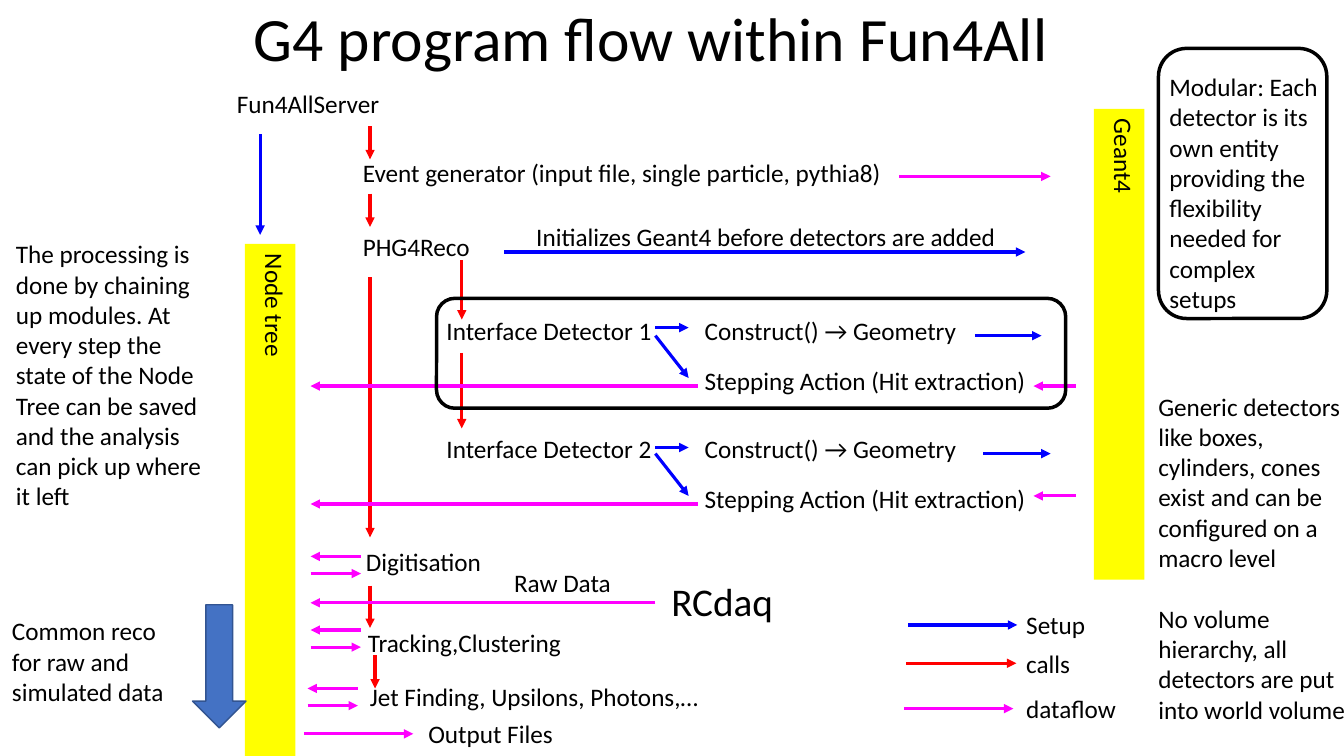
from dataclasses import dataclass

from lxml.etree import SubElement
from pptx import Presentation
from pptx.dml.color import RGBColor
from pptx.enum.shapes import MSO_CONNECTOR, MSO_SHAPE
from pptx.enum.text import MSO_ANCHOR, MSO_AUTO_SIZE, PP_ALIGN
from pptx.oxml.ns import qn
from pptx.slide import Slide
from pptx.text.text import TextFrame
from pptx.util import Inches, Pt

BLACK = RGBColor(0x00, 0x00, 0x00)
YELLOW = RGBColor(0xFF, 0xFF, 0x00)
SETUP = RGBColor(0x00, 0x00, 0xFF)
CALLS = RGBColor(0xFF, 0x00, 0x00)
DATAFLOW = RGBColor(0xFF, 0x00, 0xFF)
STEEL_BLUE = RGBColor(0x44, 0x72, 0xC4)
DARK_BLUE = RGBColor(0x32, 0x54, 0x91)


@dataclass(frozen=True)
class Label:
    text: str
    left: float
    top: float
    width: float
    height: float = 0.4
    size: int = 18
    wrap: bool = False
    anchor: MSO_ANCHOR = MSO_ANCHOR.TOP
    line_spacing: float = 1.0


@dataclass(frozen=True)
class Arrow:
    color: RGBColor
    start_x: float
    start_y: float
    end_x: float
    end_y: float


@dataclass(frozen=True)
class Block:
    preset: MSO_SHAPE
    left: float
    top: float
    width: float
    height: float
    fill: RGBColor | None = None
    line: RGBColor | None = None
    line_width: float = 2.5
    text: str = ""


DETECTOR_STEP = 1.17
INTERFACE_TOP = 3.08

LABELS = [
    Label("G4 program flow within Fun4All", 2.42, -0.21, 8.5, 1.25, 44, True,
          MSO_ANCHOR.MIDDLE, 0.9),
    Label("Fun4AllServer", 2.25, 0.83, 1.69),
    Label("Event generator (input file, single particle, pythia8)", 3.5, 1.51, 5.41),
    Label("PHG4Reco", 3.5, 2.25, 1.27),
    Label("Initializes Geant4 before detectors are added", 5.22, 2.15, 4.81),
    Label("Digitisation", 3.53, 5.37, 1.38),
    Label("Raw Data", 5, 5.58, 1.17),
    Label("RCdaq", 6.56, 5.68, 1.22, 0.47, 28),
    Label("Tracking,Clustering", 3.55, 6.17, 2.21),
    Label("Jet Finding, Upsilons, Photons,…", 3.57, 6.71, 3.58),
    Label("Output Files", 4.15, 7.08, 1.44),
    Label("Setup", 10.08, 6, 0.79),
    Label("calls", 10.08, 6.38, 0.66),
    Label("dataflow", 10.08, 6.83, 1.1),
    Label("Modular: Each detector is its own entity providing the flexibility "
          "needed for complex setups", 11.5, 0.66, 1.73, 2.52, wrap=True),
    Label("Generic detectors like boxes, cylinders, cones exist and can be "
          "configured on a macro level\nNo volume hierarchy, all detectors are "
          "put into world volume", 11.39, 3.83, 2.07, 3.43, wrap=True),
    Label("The processing is done by chaining up modules. At every step the state "
          "of the Node Tree can be saved and the analysis can pick up where it left",
          0.06, 2.32, 2.1, 2.83, wrap=True),
    Label("Common reco for raw and simulated data", 0.02, 6.06, 1.92, 1.01, wrap=True),
]

ARROWS = [
    Arrow(SETUP, 2.58, 1.33, 2.58, 2.33),
    Arrow(SETUP, 5, 2.5, 10.17, 2.5),
    Arrow(SETUP, 6.5, 3.25, 6.83, 3.25),
    Arrow(SETUP, 6.5, 4.44, 6.83, 4.44),
    Arrow(SETUP, 9.67, 3.33, 10.33, 3.33),
    Arrow(SETUP, 9.75, 4.5, 10.42, 4.5),
    Arrow(SETUP, 9.01, 6.2, 10.09, 6.2),
    Arrow(CALLS, 3.67, 1.25, 3.67, 1.58),
    Arrow(CALLS, 3.67, 1.92, 3.67, 2.25),
    Arrow(CALLS, 3.67, 2.75, 3.67, 5.33),
    Arrow(CALLS, 4.58, 2.58, 4.58, 3.17),
    Arrow(CALLS, 4.58, 3.5, 4.58, 4.25),
    Arrow(CALLS, 3.67, 5.81, 3.67, 6.23),
    Arrow(CALLS, 3.72, 6.5, 3.72, 6.83),
    Arrow(CALLS, 8.99, 6.58, 10.08, 6.58),
    Arrow(DATAFLOW, 8.92, 1.75, 10.42, 1.75),
    Arrow(DATAFLOW, 10.67, 3.83, 10.25, 3.83),
    Arrow(DATAFLOW, 10.67, 4.92, 10.25, 4.92),
    Arrow(DATAFLOW, 6.5, 5.98, 3.08, 5.98),
    Arrow(DATAFLOW, 3.02, 7.28, 4.1, 7.28),
    Arrow(DATAFLOW, 8.97, 7.03, 10.05, 7.03),
]

for detector in range(2):
    shift = detector * DETECTOR_STEP
    LABELS += [
        Label(f"Interface Detector {detector + 1}", 4.33, INTERFACE_TOP + shift, 2.26),
        Label("Construct() → Geometry", 6.89, INTERFACE_TOP + shift, 2.74),
        Label("Stepping Action (Hit extraction)", 6.89, INTERFACE_TOP + 0.5 + shift, 3.44),
    ]
    ARROWS += [
        Arrow(SETUP, 6.5, 3.33 + shift, 6.83, 3.75 + shift),
        Arrow(DATAFLOW, 6.92, 3.83 + shift, 3.08, 3.83 + shift),
    ]

for exchange_left, exchange_top in ((3.08, 5.52), (3.08, 6.25), (3.05, 6.83)):
    exchange_right = exchange_left + 0.5
    return_y = exchange_top + 0.17
    ARROWS += [
        Arrow(DATAFLOW, exchange_right, exchange_top, exchange_left, exchange_top),
        Arrow(DATAFLOW, exchange_left, return_y, exchange_right, return_y),
    ]

BARS = [
    Block(MSO_SHAPE.RECTANGLE, 2.43, 2.42, 0.5, 5.08, YELLOW, text="Node tree"),
    Block(MSO_SHAPE.RECTANGLE, 10.85, 1.08, 0.5, 4.67, YELLOW, text="Geant4"),
]
OUTLINES = [
    Block(MSO_SHAPE.ROUNDED_RECTANGLE, 4.33, 2.96, 6.24, 1.09, line=BLACK),
    Block(MSO_SHAPE.ROUNDED_RECTANGLE, 11.49, 0.48, 1.67, 2.68, line=BLACK),
    Block(MSO_SHAPE.DOWN_ARROW, 1.91, 6, 0.53, 1.22, STEEL_BLUE, DARK_BLUE, 1),
]


def write_text(frame: TextFrame, text: str, size: int, alignment: PP_ALIGN,
               line_spacing: float = 1.0) -> None:
    frame.text = text
    font_format = {"name": "Calibri", "size": Pt(size)}
    for index, paragraph in enumerate(frame.paragraphs):
        paragraph.alignment = alignment
        paragraph.line_spacing = line_spacing
        if index:
            paragraph.space_before = Pt(22)
        for run in paragraph.runs:
            for attribute, value in font_format.items():
                setattr(run.font, attribute, value)
            run.font.color.rgb = BLACK


def draw_label(slide: Slide, label: Label) -> None:
    box = slide.shapes.add_textbox(Inches(label.left), Inches(label.top),
                                   Inches(label.width), Inches(label.height))
    frame_format = {"word_wrap": label.wrap, "vertical_anchor": label.anchor,
                    "auto_size": MSO_AUTO_SIZE.NONE if label.size == 44
                    else MSO_AUTO_SIZE.SHAPE_TO_FIT_TEXT}
    for attribute, value in frame_format.items():
        setattr(box.text_frame, attribute, value)
    write_text(box.text_frame, label.text, label.size, PP_ALIGN.LEFT, label.line_spacing)


def draw_arrow(slide: Slide, arrow: Arrow) -> None:
    connector = slide.shapes.add_connector(
        MSO_CONNECTOR.STRAIGHT, Inches(arrow.start_x), Inches(arrow.start_y),
        Inches(arrow.end_x), Inches(arrow.end_y))
    connector.line.color.rgb = arrow.color
    connector.line.width = Pt(2.25)
    properties = connector._element.spPr
    SubElement(properties.find(qn("a:ln")), qn("a:tailEnd"), type="triangle")
    SubElement(properties, qn("a:effectLst"))


def draw_block(slide: Slide, block: Block) -> None:
    shape = slide.shapes.add_shape(block.preset, Inches(block.left), Inches(block.top),
                                   Inches(block.width), Inches(block.height))
    shape.shadow.inherit = False
    if block.fill is None:
        shape.fill.background()
    else:
        shape.fill.solid()
        shape.fill.fore_color.rgb = block.fill
    if block.line is None:
        shape.line.fill.background()
    else:
        shape.line.color.rgb = block.line
        shape.line.width = Pt(block.line_width)
    if block.text:
        frame = shape.text_frame
        frame.vertical_anchor = MSO_ANCHOR.TOP
        frame.auto_size = MSO_AUTO_SIZE.SHAPE_TO_FIT_TEXT
        frame._txBody.bodyPr.set("vert", "eaVert")
        write_text(frame, block.text, 18, PP_ALIGN.CENTER)


def main() -> None:
    presentation = Presentation()
    presentation.slide_width = Inches(13.33)
    presentation.slide_height = Inches(7.5)
    slide = presentation.slides.add_slide(presentation.slide_layouts[6])
    for draw, elements in ((draw_block, BARS), (draw_label, LABELS),
                           (draw_arrow, ARROWS), (draw_block, OUTLINES)):
        for element in elements:
            draw(slide, element)
    presentation.save("out.pptx")


if __name__ == "__main__":
    main()
